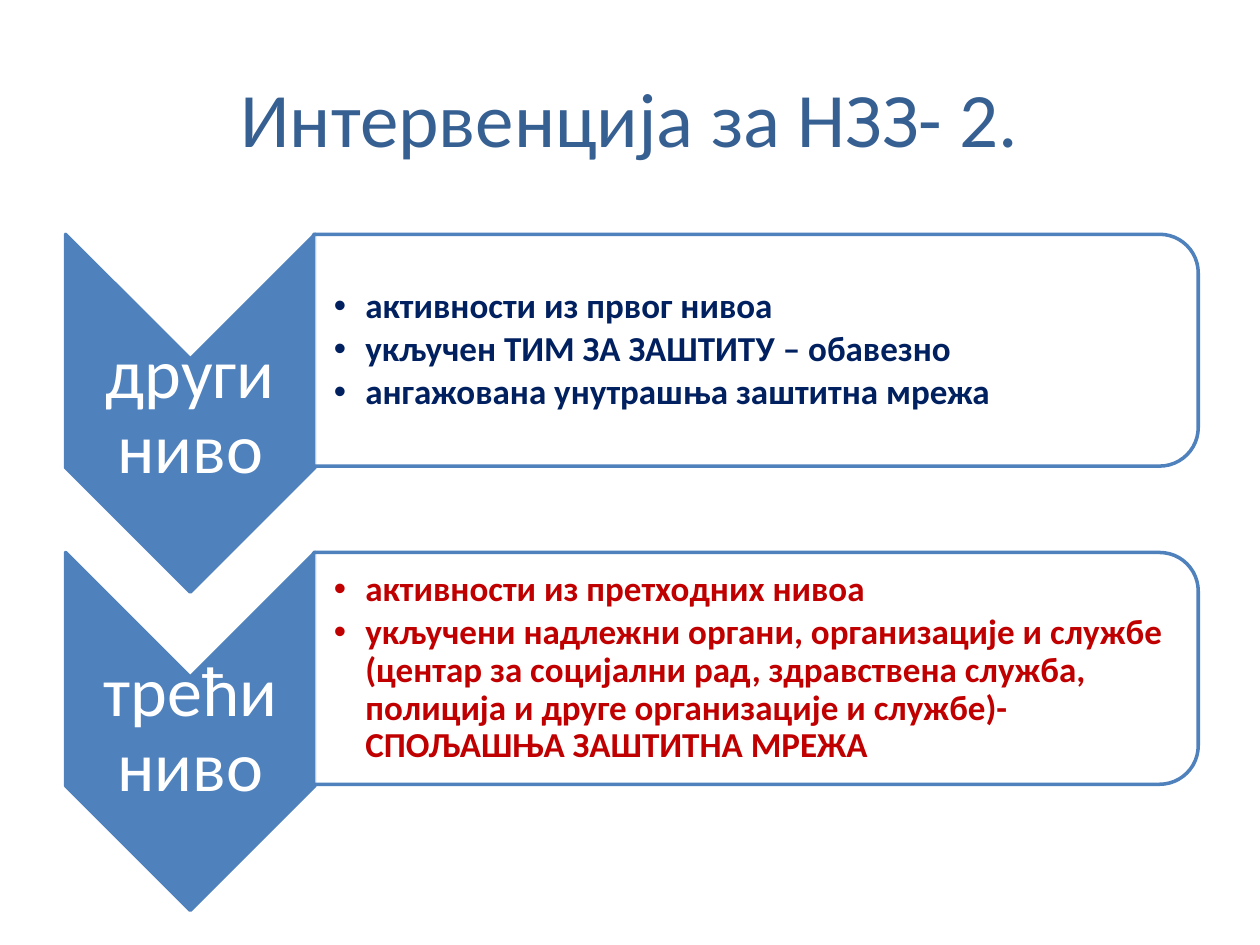
from lxml import etree
from pptx import Presentation
from pptx.dml.color import RGBColor
from pptx.enum.shapes import MSO_SHAPE
from pptx.enum.text import MSO_ANCHOR, PP_ALIGN
from pptx.oxml.ns import qn
from pptx.util import Inches, Pt

CHEVRON = MSO_SHAPE.CHEVRON
ROUNDED_PANEL = MSO_SHAPE.ROUND_2_SAME_RECTANGLE
MIDDLE = MSO_ANCHOR.MIDDLE
CENTER, LEFT = PP_ALIGN.CENTER, PP_ALIGN.LEFT

BLUE, WHITE = "4F81BD", "FFFFFF"
FIRST_TOP, ROW_STEP = 1.86, 2.525
CHEVRON_LEFT, CHEVRON_WIDTH, CHEVRON_HEIGHT = 0.52, 1.98, 2.84
PANEL_LEFT, PANEL_WIDTH, PANEL_HEIGHT = 2.49, 7.02, 1.84
BULLET_INDENT = 0.25

LEVELS = [
    ("други ниво", "002060", [
        "активности из првог нивоа",
        "укључен ТИМ ЗА ЗАШТИТУ – обавезно",
        "ангажована унутрашња заштитна мрежа",
    ]),
    ("трећи ниво", "C00000", [
        "активности из претходних нивоа",
        "укључени надлежни органи, организације и службе (центар за социјални рад, "
        "здравствена служба, полиција и друге организације и службе)-"
        "СПОЉАШЊА ЗАШТИТНА МРЕЖА",
    ]),
]


def color(value):
    """Return the colour for a hex string."""
    return RGBColor.from_string(value)


def write(frame, lines, size, ink, bold=False, align=CENTER, spacing=None,
          after=0, bullets=False, margins=None):
    """Fill a text frame with one formatted paragraph per line."""
    frame.word_wrap = True
    frame.vertical_anchor = MIDDLE
    if margins:
        (frame.margin_left, frame.margin_top,
         frame.margin_right, frame.margin_bottom) = map(Inches, margins)
    for index, line in enumerate(lines):
        paragraph = frame.add_paragraph() if index else frame.paragraphs[0]
        paragraph.alignment = align
        paragraph.line_spacing = spacing
        paragraph.space_after = Pt(after)
        run = paragraph.add_run()
        run.text = line
        run.font.name = "Calibri"
        run.font.size = Pt(size)
        run.font.bold = bold
        run.font.color.rgb = color(ink)
        if bullets:
            add_bullet(paragraph)


def add_bullet(paragraph):
    """Give a paragraph a round bullet with a hanging indent."""
    properties = paragraph._p.get_or_add_pPr()
    properties.set("marL", str(Inches(BULLET_INDENT)))
    properties.set("indent", str(-Inches(BULLET_INDENT)))
    etree.SubElement(properties, qn("a:buFont")).set("typeface", "Arial")
    etree.SubElement(properties, qn("a:buChar")).set("char", "•")


def add_turned(slide, preset, left, top, width, height, fill, opacity=100):
    """Add a shape turned a quarter right that covers the given box."""
    shift = (width - height) / 2
    shape = slide.shapes.add_shape(
        preset, Inches(left + shift), Inches(top - shift),
        Inches(height), Inches(width))
    shape.rotation = 90
    shape.shadow.inherit = False
    shape.fill.solid()
    shape.fill.fore_color.rgb = color(fill)
    if opacity < 100:
        tint = shape.fill._xPr.find(".//" + qn("a:srgbClr"))
        etree.SubElement(tint, qn("a:alpha")).set("val", str(opacity * 1000))
    shape.line.color.rgb = color(BLUE)
    shape.line.width = Pt(2)


def add_text(slide, left, top, width, height, lines, **style):
    """Add a text box with formatted lines."""
    box = slide.shapes.add_textbox(*map(Inches, (left, top, width, height)))
    write(box.text_frame, lines, **style)


def add_level(slide, top, label, ink, activities):
    """Add one level: chevron with its label, panel with its activities."""
    notch = CHEVRON_WIDTH / 2
    add_turned(slide, CHEVRON, CHEVRON_LEFT, top,
               CHEVRON_WIDTH, CHEVRON_HEIGHT, BLUE)
    add_text(slide, CHEVRON_LEFT, top + notch, CHEVRON_WIDTH,
             CHEVRON_HEIGHT - 2 * notch, [label], size=40, ink=WHITE,
             spacing=0.9, after=14, margins=[0.03] * 4)
    add_turned(slide, ROUNDED_PANEL, PANEL_LEFT, top,
               PANEL_WIDTH, PANEL_HEIGHT, WHITE, opacity=90)
    inset = 0.09
    add_text(slide, PANEL_LEFT, top + inset, PANEL_WIDTH - inset,
             PANEL_HEIGHT - 2 * inset, activities, size=20, ink=ink, bold=True,
             align=LEFT, spacing=0.9, after=3, bullets=True,
             margins=[0.16, 0.01, 0.01, 0.01])


def add_title(slide, text):
    """Place and format the title."""
    title = slide.shapes.title
    title.left, title.top, title.width, title.height = map(
        Inches, (0.5, 0.3, 9, 1.25))
    write(title.text_frame, [text], size=44, ink="376092")


def main():
    """Build the slide and save it."""
    deck = Presentation()
    deck.slide_width, deck.slide_height = Inches(10), Inches(7.5)
    slide = deck.slides.add_slide(deck.slide_layouts[5])
    add_title(slide, "Интервенција за НЗЗ- 2.")
    for row, level in enumerate(LEVELS):
        add_level(slide, FIRST_TOP + row * ROW_STEP, *level)
    deck.save("out.pptx")


if __name__ == "__main__":
    main()
